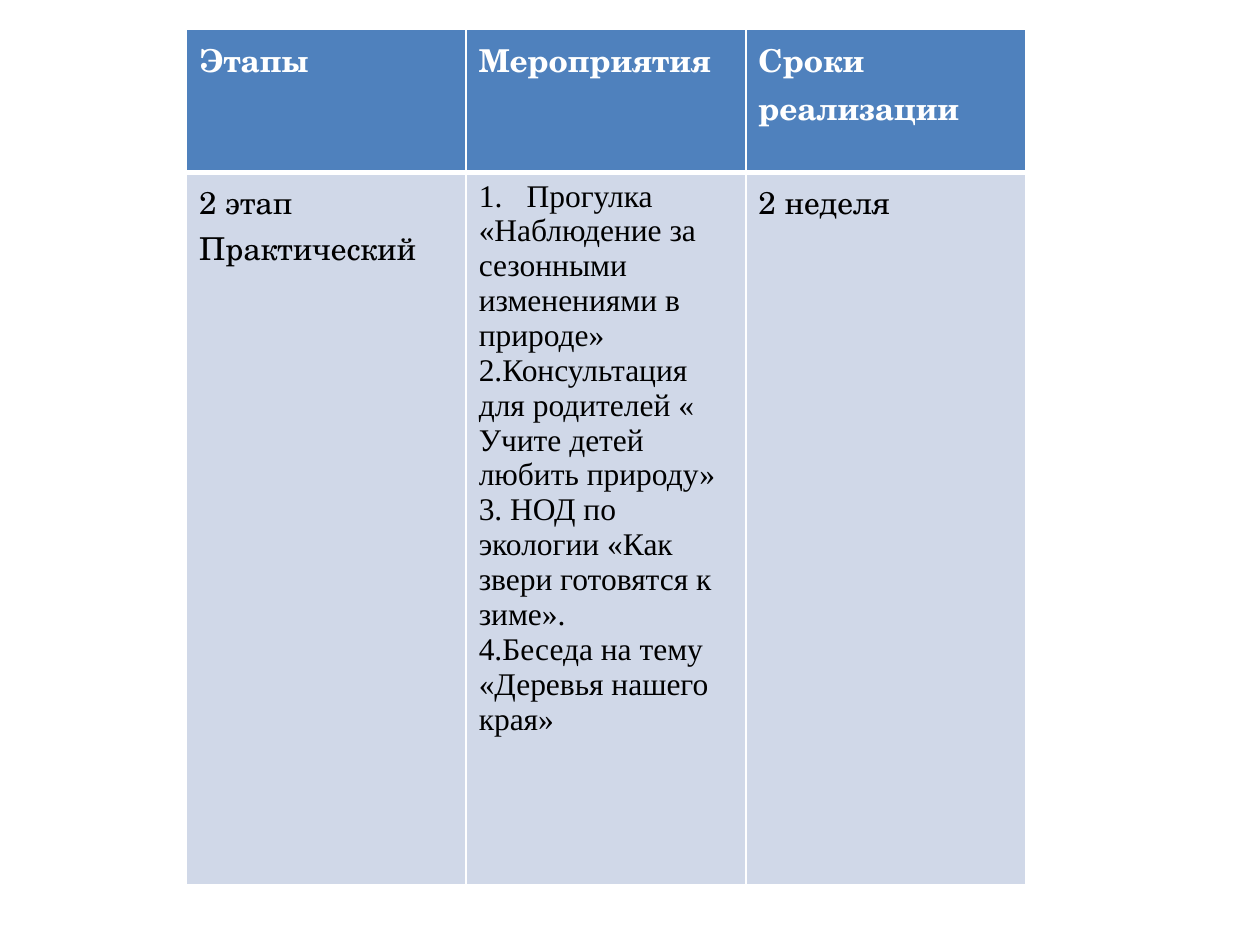
import pptx
import pptx.dml.color
import pptx.enum.text
import pptx.oxml.ns
import pptx.util
from lxml import etree
from pptx.util import Inches

HEADERS = ["Этапы", "Мероприятия", "Сроки реализации"]
STAGE = ["2 этап", "Практический"]
ACTIVITIES = [
    "Прогулка",
    "«Наблюдение за",
    "сезонными",
    "изменениями в",
    "природе»",
    "2.Консультация ",
    "для родителей « ",
    "Учите детей ",
    "любить природу»",
    "3. НОД по ",
    "экологии «Как ",
    "звери готовятся к ",
    "зиме».",
    "4.Беседа на тему ",
    "«Деревья нашего ",
    "края»",
]
PERIOD = ["2 неделя"]


def color(value):
    return pptx.dml.color.RGBColor.from_string(value)


def add_element(parent, tag, **attributes):
    return etree.SubElement(parent, pptx.oxml.ns.qn(tag), **attributes)


class SlideBuilder:
    """Hold the style and the current slide of the plan table."""

    heading_font = "TeX Gyre Schola"
    list_font = "Times New Roman"
    header_fill = "4F81BD"
    body_fill = "D0D8E8"
    white = "FFFFFF"
    black = "000000"
    font_size = 18
    list_indent = Inches(0.38)

    def __init__(self, presentation):
        self.slide = presentation.slides.add_slide(presentation.slide_layouts[6])

    def add_table(self, left, top, column_widths, row_heights):
        shape = self.slide.shapes.add_table(
            len(row_heights), len(column_widths), Inches(left), Inches(top),
            Inches(sum(column_widths)), Inches(sum(row_heights)))
        table = shape.table
        for column, width in zip(table.columns, column_widths):
            column.width = Inches(width)
        for row, height in zip(table.rows, row_heights):
            row.height = Inches(height)
        return table

    def set_borders(self, cell, top, bottom):
        properties = cell._tc.get_or_add_tcPr()
        widths = {"a:lnL": 1, "a:lnR": 1, "a:lnT": top, "a:lnB": bottom}
        for tag, width in widths.items():
            line = add_element(properties, tag, w=str(pptx.util.Pt(width)))
            fill = add_element(line, "a:solidFill")
            add_element(fill, "a:srgbClr", val=self.white)

    def fill_cell(self, cell, lines, font_name, header=False):
        self.set_borders(cell, *((1, 3) if header else (3, 1)))
        cell.fill.solid()
        cell.fill.fore_color.rgb = color(self.header_fill if header else self.body_fill)
        cell.text = "\n".join(lines)
        for paragraph in cell.text_frame.paragraphs:
            font = paragraph.font
            font.name = font_name
            font.size = pptx.util.Pt(self.font_size)
            font.bold = header
            font.color.rgb = color(self.white if header else self.black)

    def fill_list_cell(self, cell, lines):
        paragraphs_cell = cell.text_frame
        paragraphs_cell.text = "\n".join(lines)
        self.fill_cell(cell, lines, self.list_font)
        for index, paragraph in enumerate(cell.text_frame.paragraphs):
            paragraph.alignment = pptx.enum.text.PP_ALIGN.JUSTIFY
            properties = paragraph._p.get_or_add_pPr()
            properties.set("marL", str(self.list_indent))
            properties.set("indent", str(-self.list_indent))
            if index == 0:
                bullet = add_element(properties, "a:buAutoNum", type="arabicPeriod")
            else:
                bullet = add_element(properties, "a:buNone")
            properties.insert(0, bullet)


def main():
    presentation = pptx.Presentation()
    presentation.slide_width = Inches(10)
    presentation.slide_height = Inches(7.5)
    builder = SlideBuilder(presentation)
    table = builder.add_table(1.48, 0.23, [2.22] * 3, [1.14, 5.65])
    for column, header in enumerate(HEADERS):
        builder.fill_cell(table.cell(0, column), [header], builder.heading_font, header=True)
    builder.fill_cell(table.cell(1, 0), STAGE, builder.heading_font)
    builder.fill_list_cell(table.cell(1, 1), ACTIVITIES)
    builder.fill_cell(table.cell(1, 2), PERIOD, builder.heading_font)
    presentation.save("out.pptx")


if __name__ == "__main__":
    main()
